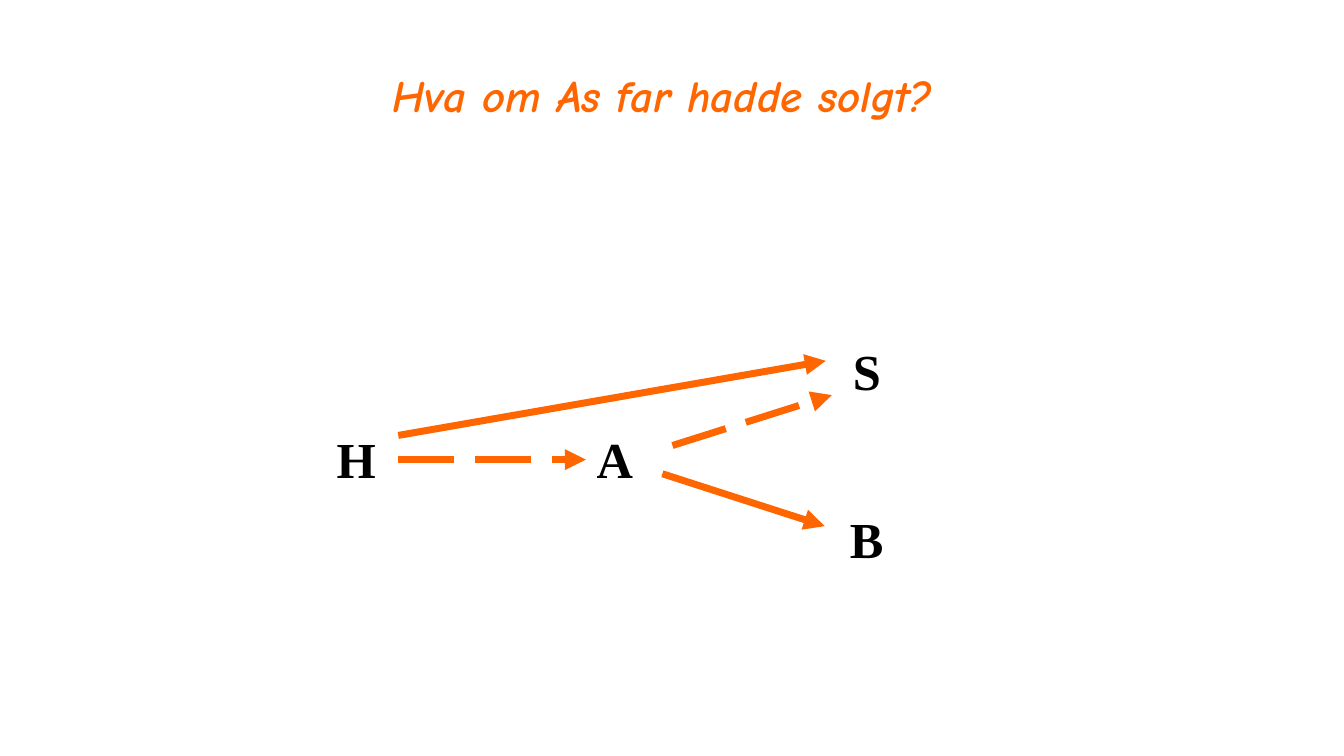
from dataclasses import dataclass

from lxml import etree
from pptx import Presentation
from pptx.dml.color import RGBColor
from pptx.enum.dml import MSO_LINE
from pptx.enum.shapes import MSO_CONNECTOR
from pptx.enum.text import MSO_ANCHOR, MSO_AUTO_SIZE, PP_ALIGN
from pptx.oxml.ns import qn
from pptx.util import Inches, Pt

STRAIGHT = MSO_CONNECTOR.STRAIGHT
LONG_DASH = MSO_LINE.LONG_DASH
MIDDLE = MSO_ANCHOR.MIDDLE
CENTER = PP_ALIGN.CENTER
FIT_SHAPE = MSO_AUTO_SIZE.SHAPE_TO_FIT_TEXT


@dataclass(frozen=True)
class Theme:
    accent: RGBColor = RGBColor(0xFF, 0x66, 0x00)
    text: RGBColor = RGBColor(0, 0, 0)
    background: RGBColor = RGBColor(0xFF, 0xFF, 0xFF)
    title_font: str = "Comic Neue"
    label_font: str = "Times New Roman"
    title_size: Pt = Pt(32)
    label_size: Pt = Pt(36)
    arrow_width: Pt = Pt(5)


theme = Theme()


def set_font(r, name, size, color, italic=False):
    r.font.name = name
    r.font.size = size
    r.font.color.rgb = color
    r.font.bold = True
    r.font.italic = italic


prs = Presentation()
prs.slide_width, prs.slide_height = Inches(13.33), Inches(7.5)
slide = prs.slides.add_slide(prs.slide_layouts[5])

# Title
title = slide.shapes.title
title.left, title.top = Inches(3.38), Inches(0.68)
title.width, title.height = Inches(6.38), Inches(0.58)
title.fill.solid()
title.fill.fore_color.rgb = theme.background
tf = title.text_frame
tf.text = "Hva om As far hadde solgt?"
tf.word_wrap = False
tf.auto_size = FIT_SHAPE
tf.vertical_anchor = MIDDLE
p = tf.paragraphs[0]
p.alignment = CENTER
p.line_spacing = 0.9
set_font(p.runs[0], theme.title_font, theme.title_size, theme.accent, italic=True)

# Parties: name, left, top, width
parties = [
    ("H", 3.24, 4.2, 0.59),
    ("A", 5.82, 4.2, 0.56),
    ("S", 8.36, 3.33, 0.48),
    ("B", 8.33, 4.99, 0.53),
]
for name, left, top, width in parties:
    sp = slide.shapes.add_textbox(Inches(left), Inches(top), Inches(width), Inches(0.7))
    tf = sp.text_frame
    tf.text = name
    tf.word_wrap = False
    tf.auto_size = FIT_SHAPE
    set_font(tf.paragraphs[0].runs[0], theme.label_font, theme.label_size, theme.text)

# Sales between the parties: start x, y, end x, y, dash style
sales = [
    (3.95, 4.32, 8.19, 3.58, None),       # H to S
    (3.95, 4.56, 5.81, 4.56, LONG_DASH),  # H to A
    (6.67, 4.42, 8.25, 3.92, LONG_DASH),  # A to S
    (6.57, 4.7, 8.18, 5.22, None),        # A to B
]
for x1, y1, x2, y2, dash in sales:
    arrow = slide.shapes.add_connector(
        STRAIGHT, Inches(x1), Inches(y1), Inches(x2), Inches(y2))
    arrow.line.color.rgb = theme.accent
    arrow.line.width = theme.arrow_width
    if dash:
        arrow.line.dash_style = dash
    etree.SubElement(arrow.line._get_or_add_ln(), qn("a:tailEnd"), type="triangle")
    etree.SubElement(arrow._element.spPr, qn("a:effectLst"))

prs.save("out.pptx")
